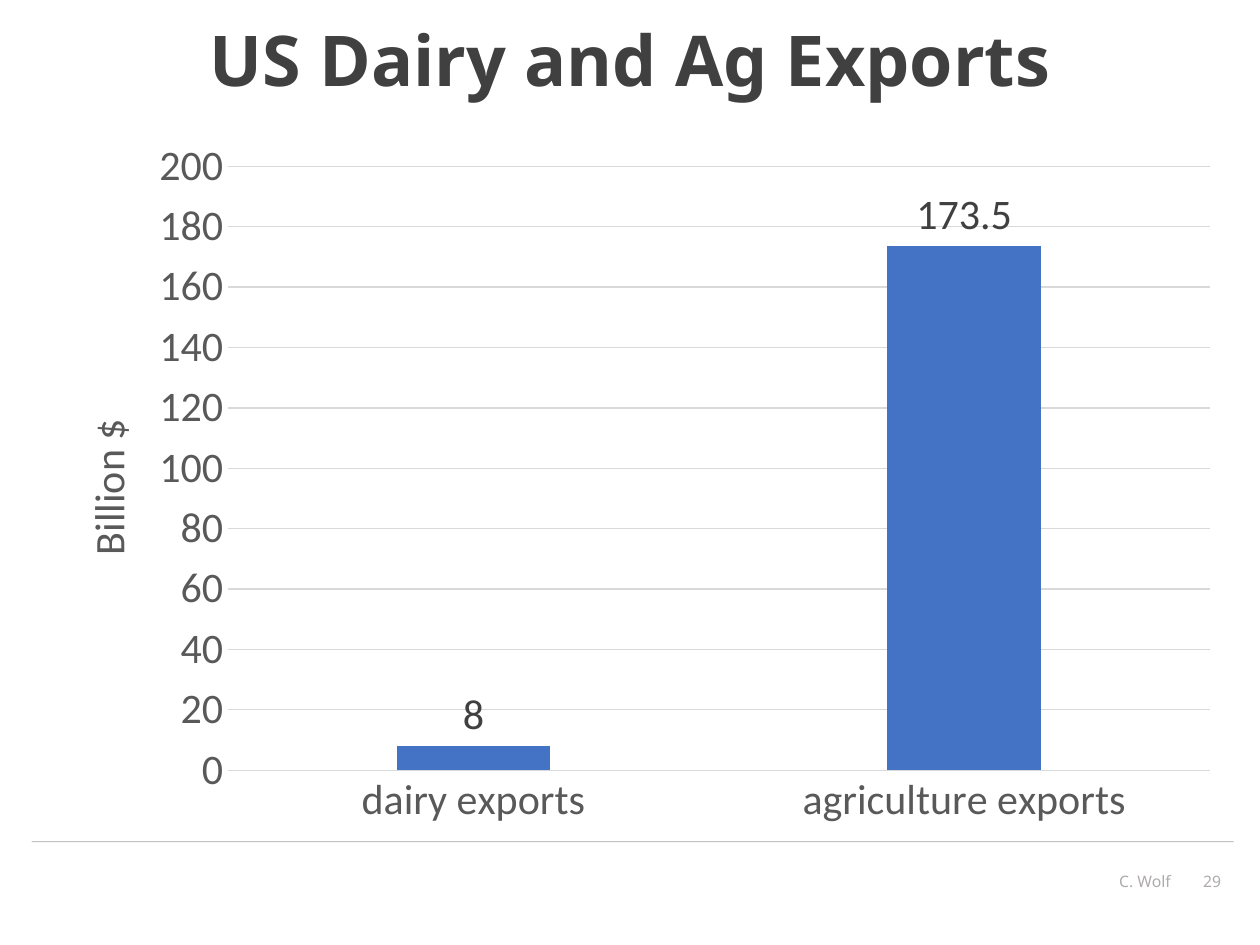
from lxml.etree import SubElement
from pptx import Presentation
from pptx.chart.data import CategoryChartData
from pptx.dml.color import RGBColor
from pptx.enum.chart import XL_CHART_TYPE, XL_LABEL_POSITION, XL_TICK_MARK
from pptx.enum.shapes import MSO_CONNECTOR
from pptx.enum.text import MSO_ANCHOR, MSO_AUTO_SIZE, PP_ALIGN
from pptx.oxml import parse_xml
from pptx.oxml.ns import nsdecls, qn
from pptx.util import Inches, Pt

THEME = {
    "title": {"name": "Noto Sans", "size": Pt(40), "bold": True, "color": "404040"},
    "footer": {"name": "Noto Sans", "size": Pt(9), "bold": False, "color": "AFABAB"},
    "axis": {"name": "Calibri", "size": Pt(24), "bold": False, "color": "595959"},
    "label": {"name": "Calibri", "size": Pt(24), "bold": False, "color": "404040"},
    "bar": RGBColor.from_string("4472C4"),
    "grid": RGBColor.from_string("D9D9D9"),
    "rule": RGBColor.from_string("AFABAB"),
}

# Slide grid: 100 columns by 75 rows
deck = Presentation()
deck.slide_width, deck.slide_height = Inches(10), Inches(7.5)
COLUMN, ROW = deck.slide_width / 100, deck.slide_height / 75
FOOTER_ROW, RIGHT_EDGE = 68.7, 97.9


def place(left, top, width, height):
    return [int(n) for n in (left * COLUMN, top * ROW, width * COLUMN, height * ROW)]


def style(font, role):
    for name, value in THEME[role].items():
        if name == "color":
            font.color.rgb = RGBColor.from_string(value)
        else:
            setattr(font, name, value)


slide = deck.slides.add_slide(deck.slide_layouts[5])

# Footer rule
left, top, width, _ = place(2.5, 66.8, 95.4, 0)
rule = slide.shapes.add_connector(MSO_CONNECTOR.STRAIGHT, left, top, left + width, top)
rule.line.color.rgb, rule.line.width = THEME["rule"], Pt(0.5)
color = rule.line._ln.find(".//" + qn("a:srgbClr"))
SubElement(color, qn("a:alpha"), val="75000")
SubElement(rule._element.spPr, qn("a:effectLst"))

# Title
title = slide.shapes.title
title.left, title.top, title.width, title.height = place(5.1, 1.6, 89.8, 12.5)
frame = title.text_frame
frame.text = "US Dairy and Ag Exports"
frame.auto_size, frame.vertical_anchor = MSO_AUTO_SIZE.NONE, MSO_ANCHOR.TOP
para = frame.paragraphs[0]
para.alignment, para.line_spacing = PP_ALIGN.CENTER, 0.9
style(para.runs[0].font, "title")

# Author and page number, set side by side up to the right edge
right = RIGHT_EDGE
for text, width in (("29", 4), ("C. Wolf", 50.4)):
    right -= width
    box = slide.shapes.add_textbox(*place(right, FOOTER_ROW, width, 4))
    box.text_frame.word_wrap = True
    para = box.text_frame.paragraphs[0]
    para.text, para.alignment = text, PP_ALIGN.RIGHT
    style(para.runs[0].font, "footer")

# Column chart
data = CategoryChartData()
data.categories = ["dairy exports", "agriculture exports"]
data.add_series("Series 1", (8, 173.5))
chart = slide.shapes.add_chart(
    XL_CHART_TYPE.COLUMN_CLUSTERED, *place(2.9, 10.1, 95, 56.4), data).chart
chart.has_title = chart.has_legend = False
style(chart.font, "axis")

# Bars and their values
plot = chart.plots[0]
plot.gap_width, plot.overlap, plot.vary_by_categories = 219, -27, False
bars = plot.series[0].format.fill
bars.solid()
bars.fore_color.rgb = THEME["bar"]
plot.has_data_labels = True
labels = plot.data_labels
labels.show_value, labels.position = True, XL_LABEL_POSITION.OUTSIDE_END
style(labels.font, "label")

# Axes
categories, values = chart.category_axis, chart.value_axis
for axis in (categories, values):
    axis.major_tick_mark = axis.minor_tick_mark = XL_TICK_MARK.NONE
    style(axis.tick_labels.font, "axis")
values.minimum_scale, values.maximum_scale, values.major_unit = 0, 200, 20
values.has_major_gridlines = True
values.format.line.fill.background()
for line in (categories.format.line, values.major_gridlines.format.line):
    line.color.rgb, line.width = THEME["grid"], Pt(0.75)
values.has_title = True
caption = values.axis_title
caption.text_frame.text = "Billion $"
caption.text_frame._txBody.bodyPr.set("rot", "-5400000")
style(caption.text_frame.paragraphs[0].runs[0].font, "axis")

# Fixed places inside the chart, as shares of its size
plot_area = chart._chartSpace.chart.plotArea
for old in plot_area.findall(qn("c:layout")):
    plot_area.remove(old)
for parent, index, target, shares in (
    (plot_area, 0, '<c:layoutTarget val="inner"/>',
     {"x": 0.16, "y": 0.055, "w": 0.82, "h": 0.85}),
    (caption._element, 1, "", {"x": 0.03, "y": 0.4}),
):
    for old in parent.findall(qn("c:layout")):
        parent.remove(old)
    modes = "".join(f'<c:{key}Mode val="edge"/>' for key in "xy")
    sizes = "".join(f'<c:{key} val="{share}"/>' for key, share in shares.items())
    parent.insert(index, parse_xml(
        f'<c:layout {nsdecls("c")}><c:manualLayout>{target}{modes}{sizes}'
        "</c:manualLayout></c:layout>"))

deck.save("out.pptx")
